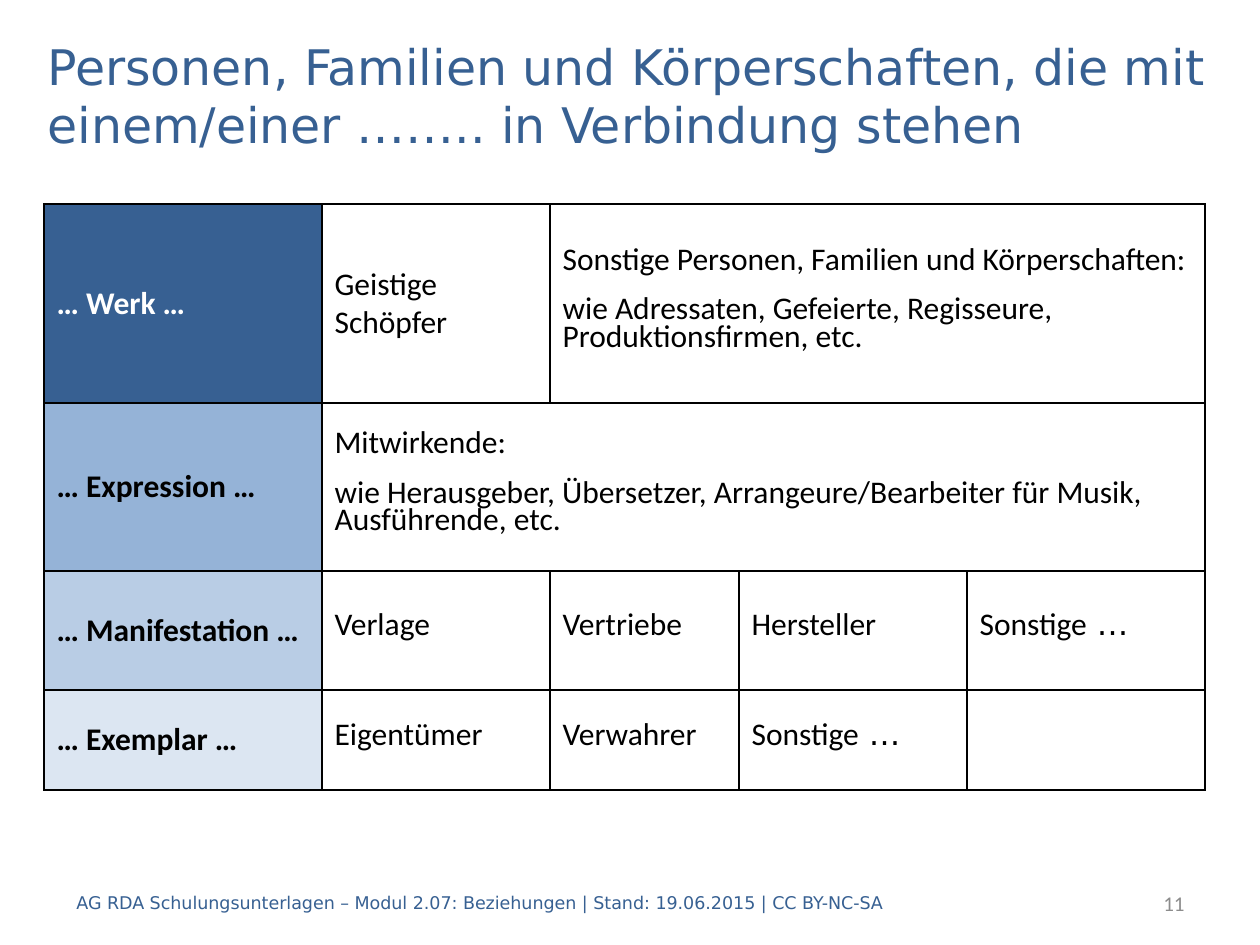
import pptx
import pptx.dml.color
import pptx.enum.text
import pptx.oxml
import pptx.oxml.ns
import pptx.util

RGBColor = pptx.dml.color.RGBColor
BLUE = RGBColor(0x37, 0x60, 0x92)
MID_BLUE = RGBColor(0x95, 0xB3, 0xD7)
LIGHT_BLUE = RGBColor(0xB9, 0xCD, 0xE5)
PALE_BLUE = RGBColor(0xDC, 0xE6, 0xF2)
GREY = RGBColor(0x8C, 0x8C, 0x8C)
BLACK = RGBColor(0, 0, 0)
WHITE = RGBColor(255, 255, 255)

BODY_FONT = "Calibri"
HEADING_FONT = "DejaVu Sans"
PX_PER_INCH = 126
ELLIPSIS = " …"

COLUMN_WIDTHS = [278, 228, 189, 228, 238]
ROW_HEIGHTS = [199, 168, 119, 100]

# Each row: label, label fill, label colour, then the cells as (columns spanned, paragraphs)
ROWS = [
    ("… Werk …", BLUE, WHITE, [
        (1, ["Geistige Schöpfer"]),
        (3, ["Sonstige Personen, Familien und Körperschaften:",
             "wie Adressaten, Gefeierte, Regisseure, Produktionsfirmen, etc."])]),
    ("… Expression …", MID_BLUE, BLACK, [
        (4, ["Mitwirkende:",
             "wie Herausgeber, Übersetzer, Arrangeure/Bearbeiter für Musik, "
             "Ausführende, etc."])]),
    ("… Manifestation …", LIGHT_BLUE, BLACK, [
        (1, ["Verlage"]), (1, ["Vertriebe"]), (1, ["Hersteller"]), (1, ["Sonstige …"])]),
    ("… Exemplar …", PALE_BLUE, BLACK, [
        (1, ["Eigentümer"]), (1, ["Verwahrer"]), (1, ["Sonstige …"]), (1, [])]),
]


def px(length):
    return pptx.util.Emu(round(length * 914400 / PX_PER_INCH))


def style_run(run, size, font, color, bold=False):
    run.font.size = pptx.util.Pt(size)
    run.font.name = font
    run.font.color.rgb = color
    run.font.bold = bold


def add_text(slide, box, text, size, font, color, align=pptx.enum.text.PP_ALIGN.LEFT):
    frame = slide.shapes.add_textbox(*map(px, box)).text_frame
    frame.word_wrap = True
    frame.vertical_anchor = pptx.enum.text.MSO_ANCHOR.MIDDLE
    frame.text = text
    paragraph = frame.paragraphs[0]
    paragraph.alignment = align
    style_run(paragraph.runs[0], size, font, color)


def set_borders(cell):
    properties = cell._tc.get_or_add_tcPr()
    for position, side in enumerate(("lnL", "lnR", "lnT", "lnB")):
        line = pptx.oxml.parse_xml(
            f'<a:{side} {pptx.oxml.ns.nsdecls("a")} w="12700"><a:solidFill>'
            f'<a:srgbClr val="{BLACK}"/></a:solidFill></a:{side}>')
        properties.insert(position, line)


def fill_cell(cell, paragraphs, fill, color=BLACK, bold=False, spaced=False):
    cell.fill.solid()
    cell.fill.fore_color.rgb = fill
    cell.vertical_anchor = pptx.enum.text.MSO_ANCHOR.MIDDLE
    cell.text_frame.text = "\n".join(paragraphs)
    for paragraph in cell.text_frame.paragraphs:
        if spaced:
            paragraph.line_spacing = pptx.util.Pt(16)
            paragraph.space_before = paragraph.space_after = pptx.util.Pt(6)
        # A closing ellipsis after a plain entry is set in the heading font
        split = not bold and paragraph.text.endswith(ELLIPSIS)
        if split:
            paragraph.text = paragraph.text.removesuffix(ELLIPSIS)
        for run in paragraph.runs:
            style_run(run, 18, BODY_FONT, color, bold)
        if split:
            ending = paragraph.add_run()
            ending.text = ELLIPSIS
            style_run(ending, 18, HEADING_FONT, color)


def add_relations_table(slide):
    table = slide.shapes.add_table(
        len(ROWS), len(COLUMN_WIDTHS), px(44), px(204),
        px(sum(COLUMN_WIDTHS)), px(sum(ROW_HEIGHTS))).table
    table.first_row = table.horz_banding = False
    for column, width in zip(table.columns, COLUMN_WIDTHS):
        column.width = px(width)
    for row, height in zip(table.rows, ROW_HEIGHTS):
        row.height = px(height)
    for cell in table.iter_cells():
        set_borders(cell)

    for r, (label, fill, color, entries) in enumerate(ROWS):
        fill_cell(table.cell(r, 0), [label], fill, color, bold=True)
        c = 1
        for span, paragraphs in entries:
            cell = table.cell(r, c)
            if span > 1:
                cell.merge(table.cell(r, c + span - 1))
            fill_cell(cell, paragraphs, WHITE, spaced=(r, c) != (0, 1))
            c += span


def main():
    presentation = pptx.Presentation()
    presentation.slide_width = px(1260)
    presentation.slide_height = px(945)
    slide = presentation.slides.add_slide(presentation.slide_layouts[6])

    # Title
    add_text(slide, (35, 25, 1191, 140),
             "Personen, Familien und Körperschaften, die mit einem/einer …….. "
             "in Verbindung stehen", 28, HEADING_FONT, BLUE)

    # Entities and the persons, families and corporate bodies related to them
    add_relations_table(slide)

    # Footer and slide number
    add_text(slide, (64, 878, 1052, 50),
             "AG RDA Schulungsunterlagen – Modul 2.07: Beziehungen | "
             "Stand: 19.06.2015 | CC BY-NC-SA", 10, HEADING_FONT, BLUE)
    add_text(slide, (997, 878, 200, 50), "11", 12, BODY_FONT, GREY,
             pptx.enum.text.PP_ALIGN.RIGHT)

    presentation.save("out.pptx")


if __name__ == "__main__":
    main()
